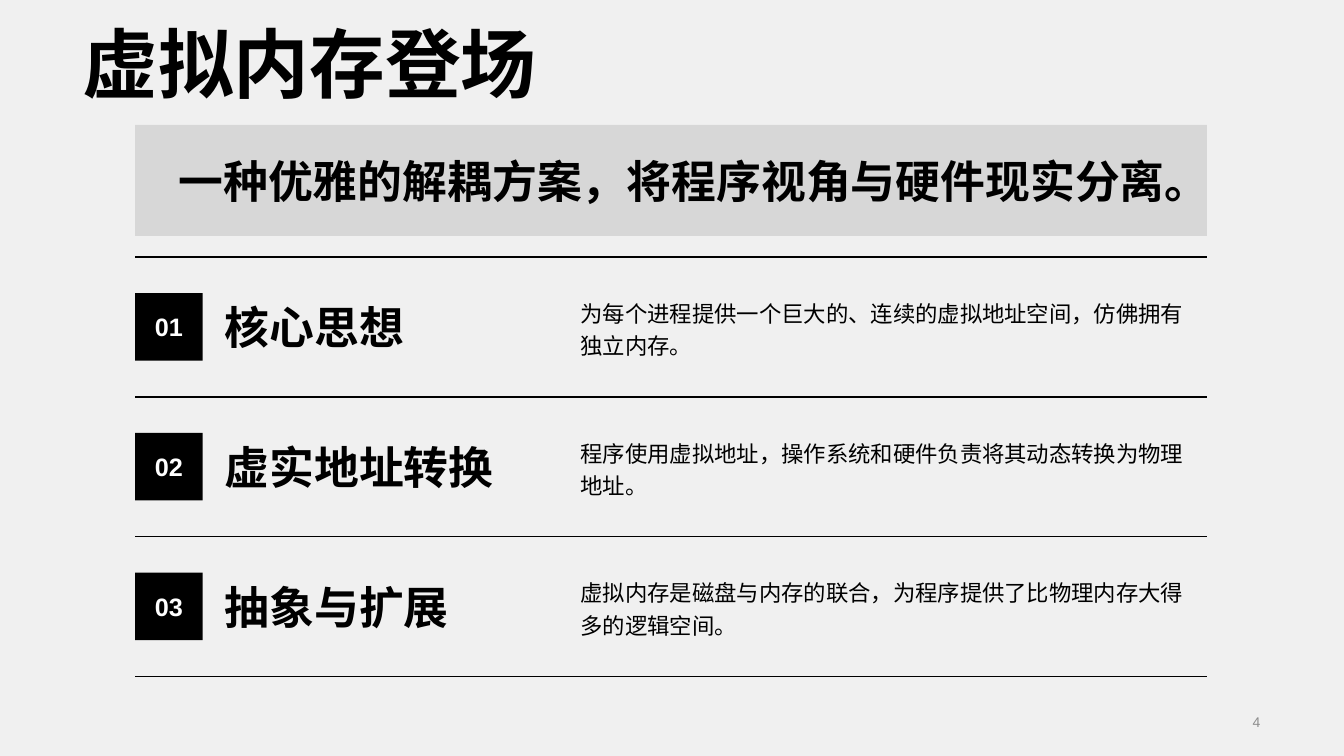
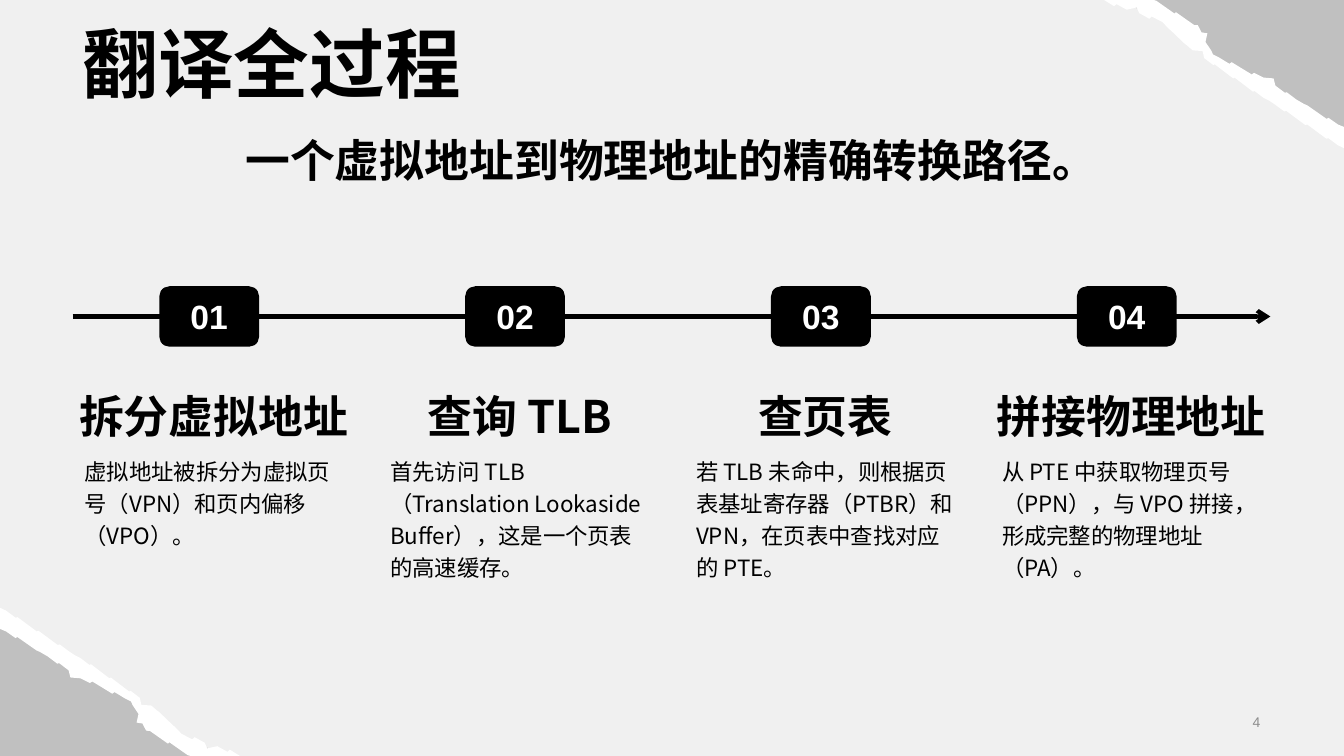
from itertools import pairwise
from math import ceil, dist

from lxml.etree import SubElement
from pptx import Presentation
from pptx.dml.color import RGBColor
from pptx.enum.shapes import MSO_CONNECTOR, MSO_SHAPE
from pptx.enum.text import MSO_ANCHOR, MSO_AUTO_SIZE, PP_ALIGN
from pptx.oxml.ns import qn
from pptx.util import Inches, Pt

COLORS = {"paper": "F0F0F0", "ink": "000000", "white": "FFFFFF", "number": "8C8C8C"}
CJK = "Noto Sans CJK SC"
LATIN = "Arial"
WIDTH, HEIGHT = 13.33, 7.5
MARGIN, CONTENT_WIDTH = 0.72, 11.88

IDEAS = [
    ("核心思想", "为每个进程提供一个巨大的、连续的虚拟地址空间，仿佛拥有独立内存。"),
    ("虚实地址转换", "程序使用虚拟地址，操作系统和硬件负责将其动态转换为物理地址。"),
    ("抽象与扩展", "虚拟内存是磁盘与内存的联合，为程序提供了比物理内存大得多的逻辑空间。"),
]
STEPS = [
    ("拆分虚拟地址", "虚拟地址被拆分为虚拟页号（VPN）和页内偏移（VPO）。"),
    ("查询 TLB", "首先访问 TLB（Translation Lookaside Buffer），这是一个页表的高速缓存。"),
    ("查页表", "若 TLB 未命中，则根据页表基址寄存器（PTBR）和VPN，在页表中查找对应的 PTE。"),
    ("拼接物理地址", "从 PTE 中获取物理页号（PPN），与 VPO 拼接，形成完整的物理地址（PA）。"),
]

TEAR_STEP, TEAR_DEPTH = 0.08, 0.07
TEAR_OUTER = [(0, 1.47), (0.74, 1), (1.5, 0.5), (1.8, 0.22), (2.38, 0)]
TEAR_INNER = [(0, 1.26), (0.4, 1.03), (0.8, 0.77), (1.3, 0.54), (1.45, 0.25), (1.89, 0)]
GREY_CORNER = [(0, 0), (0, 1.39), (0.74, 0.93), (1.5, 0.43), (1.8, 0.17), (2.29, 0)]


def color(name):
    return RGBColor.from_string(COLORS[name])


def write(tf, text, size, name="ink", font=CJK, bold=False,
          align=PP_ALIGN.LEFT, anchor=MSO_ANCHOR.MIDDLE, spacing=None, wrap=True):
    tf.word_wrap = wrap
    tf.auto_size = MSO_AUTO_SIZE.NONE
    tf.vertical_anchor = anchor
    p = tf.paragraphs[0]
    p.alignment = align
    if spacing:
        p.line_spacing = spacing
    r = p.add_run()
    r.text = text
    r.font.size = Pt(size)
    r.font.bold = bold
    r.font.color.rgb = color(name)
    r.font.name = font
    SubElement(r.font._element, qn("a:ea")).set("typeface", font)


def add_text(s, box, text, size, **style):
    sp = s.shapes.add_textbox(*map(Inches, box))
    write(sp.text_frame, text, size, **style)


def paint(sp, name, opacity=100):
    sp.shadow.inherit = False
    sp.line.fill.background()
    sp.fill.solid()
    sp.fill.fore_color.rgb = color(name)
    if opacity < 100:
        rgb = sp._element.spPr.find(qn("a:solidFill"))[0]
        SubElement(rgb, qn("a:alpha")).set("val", str(opacity * 1000))


def add_block(s, kind, box, name="ink", opacity=100):
    sp = s.shapes.add_shape(kind, *map(Inches, box))
    paint(sp, name, opacity)
    return sp


def add_badge(s, kind, box, number, size):
    sp = add_block(s, kind, box)
    write(sp.text_frame, f"{number:02d}", size, name="white", font=LATIN,
          bold=True, align=PP_ALIGN.CENTER, wrap=False)


def add_rule(s, left, right, y, weight, arrow=False):
    line = s.shapes.add_connector(MSO_CONNECTOR.STRAIGHT, *map(Inches, (left, y, right, y)))
    line.line.width = Pt(weight)
    line.line.color.rgb = color("ink")
    spPr = line._element.spPr
    if arrow:
        SubElement(spPr.find(qn("a:ln")), qn("a:tailEnd")).set("type", "arrow")
    SubElement(spPr, qn("a:effectLst"))


def add_outline(s, points, name, opacity=100):
    start, *rest = [(Inches(x), Inches(y)) for x, y in points]
    builder = s.shapes.build_freeform(*start, scale=1)
    builder.add_line_segments(rest, close=True)
    paint(builder.convert_to_shape(), name, opacity)


def jitter(k, stride):
    return TEAR_DEPTH * (k * stride % 11 / 10 - 0.5)


def roughen(guide):
    points = [guide[0]]
    for (x1, y1), (x2, y2) in pairwise(guide):
        count = ceil(dist((x1, y1), (x2, y2)) / TEAR_STEP)
        for i in range(1, count):
            k, t = len(points), i / count
            x = x1 + t * (x2 - x1) + jitter(k, 4)
            y = y1 + t * (y2 - y1) + jitter(k, 7)
            points.append((max(x, 0), max(y, 0)))
        points.append((x2, y2))
    return points


def add_torn_corners(s):
    paper_edge = roughen(TEAR_OUTER) + roughen(TEAR_INNER)[::-1]

    def bottom_left(x, y):
        return x, HEIGHT - y

    def top_right(x, y):
        return WIDTH - x, y

    for place in (bottom_left, top_right):
        add_outline(s, [place(*point) for point in GREY_CORNER], "ink", 20)
        add_outline(s, [place(*point) for point in paper_edge], "white")


def add_slide(prs, title):
    s = prs.slides.add_slide(prs.slide_layouts[5])
    sp = s.shapes.title
    sp.left, sp.top, sp.width, sp.height = map(Inches, (MARGIN, 0.14, CONTENT_WIDTH, 0.98))
    write(sp.text_frame, title, 54, bold=True, anchor=MSO_ANCHOR.BOTTOM)
    add_text(s, (8.6, 7.01, 4, 0.3), "4", 10, name="number", font=LATIN,
             align=PP_ALIGN.RIGHT)
    return s


def build_ideas(prs):
    s = add_slide(prs, "虚拟内存登场")
    left, right, top, bottom = 1.34, 11.97, 2.55, 6.71
    pitch = (bottom - top) / len(IDEAS)
    badge, text_height = 0.67, 0.96
    add_block(s, MSO_SHAPE.RECTANGLE, (left, 1.24, right - left, 1.1), opacity=10)
    add_text(s, (1.51, 1.3, 10.31, 0.98), "一种优雅的解耦方案，将程序视角与硬件现实分离。",
             32, bold=True, align=PP_ALIGN.CENTER)
    for i in range(len(IDEAS) + 1):
        add_rule(s, left, right, top + i * pitch, 1)
    for i, (heading, detail) in enumerate(IDEAS):
        middle = top + (i + 0.5) * pitch
        text_top = middle - text_height / 2
        add_badge(s, MSO_SHAPE.RECTANGLE, (left, middle - badge / 2, badge, badge), i + 1, 18)
        add_text(s, (2.13, text_top, 3.15, text_height), heading, 32, bold=True)
        add_text(s, (5.66, text_top, 6.32, text_height), detail, 16, spacing=1.2)


def build_steps(prs):
    s = add_slide(prs, "翻译全过程")
    add_torn_corners(s)
    add_text(s, (MARGIN, 1.24, CONTENT_WIDTH, 0.69), "一个虚拟地址到物理地址的精确转换路径。",
             32, bold=True, align=PP_ALIGN.CENTER)
    axis, badge_width, badge_height = 3.14, 0.99, 0.6
    add_rule(s, MARGIN, MARGIN + CONTENT_WIDTH, axis, 3, arrow=True)
    left, width, overhang = 0.74, 2.76, 0.06
    pitch = (MARGIN + CONTENT_WIDTH - width - left) / (len(STEPS) - 1)
    for i, (heading, detail) in enumerate(STEPS):
        x = left + i * pitch
        badge_box = (x + 0.84, axis - badge_height / 2, badge_width, badge_height)
        add_badge(s, MSO_SHAPE.ROUNDED_RECTANGLE, badge_box, i + 1, 24)
        add_text(s, (x - overhang, 3.67, width + 2 * overhang, 0.77), heading, 32, bold=True,
                 align=PP_ALIGN.CENTER, anchor=MSO_ANCHOR.BOTTOM, spacing=1.2)
        add_text(s, (x, 4.44, width, 1.74), detail, 16, anchor=MSO_ANCHOR.TOP, spacing=1.2)


def main():
    prs = Presentation()
    prs.slide_width, prs.slide_height = Inches(WIDTH), Inches(HEIGHT)
    fill = prs.slide_master.background.fill
    fill.solid()
    fill.fore_color.rgb = color("paper")
    build_ideas(prs)
    build_steps(prs)
    prs.save("out.pptx")


if __name__ == "__main__":
    main()
